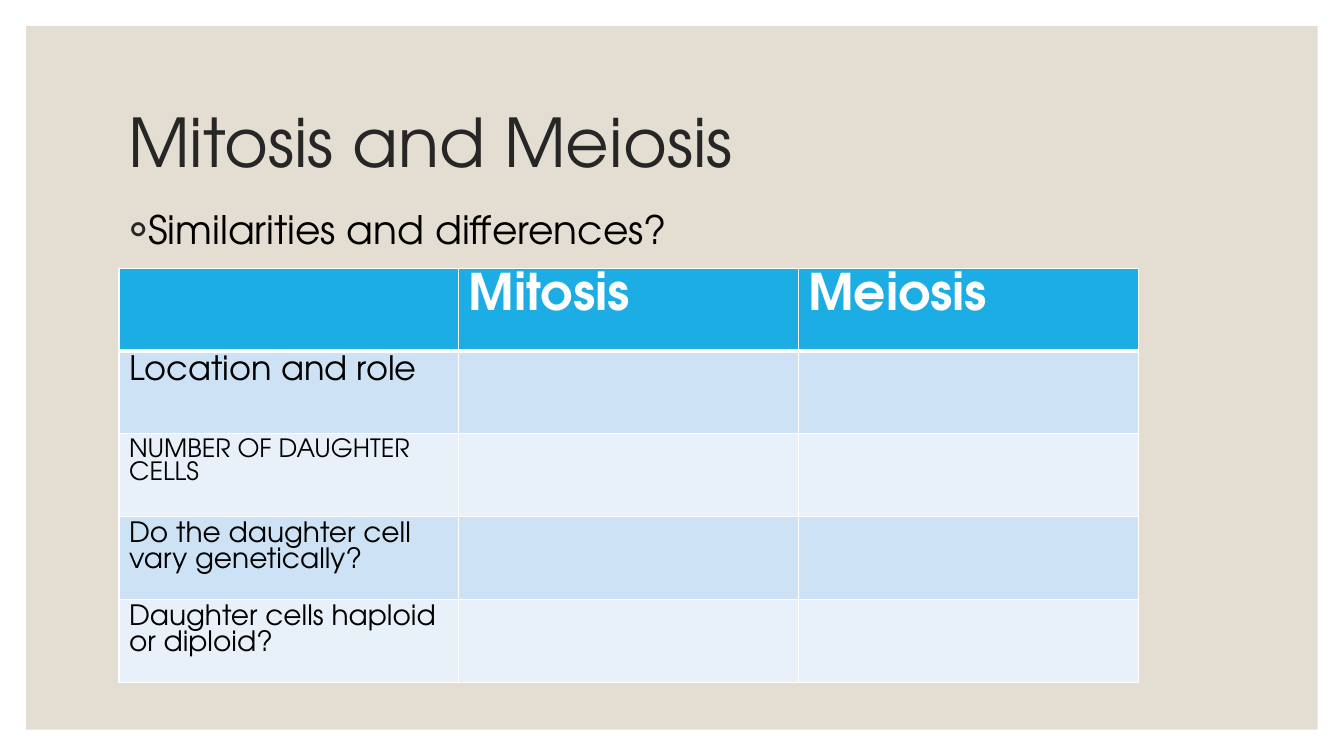
from lxml.etree import SubElement
from pptx import Presentation
from pptx.dml.color import RGBColor
from pptx.enum.shapes import MSO_SHAPE as SHAPE
from pptx.enum.text import MSO_ANCHOR as ANCHOR, MSO_AUTO_SIZE as AUTO, PP_ALIGN as ALIGN
from pptx.oxml.ns import qn
from pptx.util import Inches, Pt

WIDTH, HEIGHT, MARGIN = 13.33, 7.5, 0.26
FONT = "TeX Gyre Adventor"
SAND = RGBColor(0xE3, 0xDE, 0xD1)
INK = RGBColor(0x26, 0x26, 0x26)
BLACK = RGBColor(0, 0, 0)
WHITE = RGBColor(0xFF, 0xFF, 0xFF)
BLUE = RGBColor(0x1C, 0xAD, 0xE4)
BANDS = RGBColor(0xCD, 0xE3, 0xF5), RGBColor(0xE8, 0xF1, 0xFA)

TITLE_BOX = 1.17, 0.7, 11, 1.5
BODY_BOX = 1.17, 1.99, 11, 4.61
TABLE_BOX = 1.18, 2.66, 10.11, 4.11
ROWS = [
    (("", "Mitosis", "Meiosis"), 36),
    (("Location and role", "", ""), 24),
    (("NUMBER OF DAUGHTER CELLS", "", ""), 18),
    (("Do the daughter cell vary genetically?", "", ""), 20),
    (("Daughter cells haploid or diploid?", "", ""), 20),
]


def write(p, text, **formats):
    """Write one formatted run into a paragraph."""
    r = p.add_run()
    r.text = text
    color = formats.pop("color")
    for name, value in {"name": FONT, **formats}.items():
        setattr(r.font, name, value)
    r.font.color.rgb = color


def place(sp, box):
    """Move a placeholder into a box and return its text frame."""
    for name, value in zip(("left", "top", "width", "height"), box):
        setattr(sp, name, Inches(value))
    tf = sp.text_frame
    tf.word_wrap, tf.auto_size = True, AUTO.NONE
    return tf


def add_panel(s):
    """Lay the sand panel behind everything, inside an even margin."""
    sp = s.shapes.add_shape(
        SHAPE.RECTANGLE, Inches(MARGIN), Inches(MARGIN),
        Inches(WIDTH - 2 * MARGIN), Inches(HEIGHT - 2 * MARGIN))
    sp.shadow.inherit = False
    sp.fill.solid()
    sp.fill.fore_color.rgb = SAND
    sp.line.fill.background()
    s.shapes._spTree.insert(2, sp._element)


def add_title(s, box, text):
    """Fill the title placeholder."""
    tf = place(s.shapes.title, box)
    tf.vertical_anchor = ANCHOR.MIDDLE
    p = tf.paragraphs[0]
    p.alignment, p.line_spacing = ALIGN.LEFT, 0.9
    write(p, text, size=Pt(48), color=INK)


def add_body(s, box, text):
    """Fill the body placeholder with one bulleted line."""
    tf = place(s.placeholders[1], box)
    tf.vertical_anchor = ANCHOR.TOP
    p = tf.paragraphs[0]
    p.space_before = Pt(9)
    write(p, text, size=Pt(28), color=BLACK)
    pPr = p._p.get_or_add_pPr()
    pPr.set("marL", str(Inches(0.2)))
    pPr.set("indent", str(-Inches(0.2)))
    SubElement(SubElement(pPr, qn("a:buClr")), qn("a:srgbClr"), val=str(INK))
    SubElement(pPr, qn("a:buFont"), typeface=FONT)
    SubElement(pPr, qn("a:buChar"), char="◦")


def add_borders(cell, top, bottom):
    """Draw white cell borders, 1 pt wide at the sides."""
    tcPr = cell._tc.get_or_add_tcPr()
    for side, width in zip("LRTB", (1, 1, top, bottom)):
        ln = SubElement(tcPr, qn(f"a:ln{side}"), w=str(Pt(width)))
        SubElement(SubElement(ln, qn("a:solidFill")), qn("a:srgbClr"), val=str(WHITE))


def add_comparison(s, box, rows):
    """Build the banded table with a blue header row."""
    table = s.shapes.add_table(len(rows), len(rows[0][0]), *map(Inches, box)).table
    for i, (texts, size) in enumerate(rows):
        header = i == 0
        for j, text in enumerate(texts):
            cell = table.cell(i, j)
            add_borders(cell, 3 if i == 1 else 1, 3 if header else 1)
            cell.fill.solid()
            cell.fill.fore_color.rgb = BLUE if header else BANDS[(i - 1) % 2]
            if text:
                write(cell.text_frame.paragraphs[0], text, size=Pt(size),
                      bold=header, color=WHITE if header else BLACK)


def main():
    """Build and save the slide."""
    prs = Presentation()
    prs.slide_width, prs.slide_height = Inches(WIDTH), Inches(HEIGHT)
    s = prs.slides.add_slide(prs.slide_layouts[1])
    add_panel(s)
    add_title(s, TITLE_BOX, "Mitosis and Meiosis")
    add_body(s, BODY_BOX, "Similarities and differences?")
    add_comparison(s, TABLE_BOX, ROWS)
    prs.save("out.pptx")


if __name__ == "__main__":
    main()
